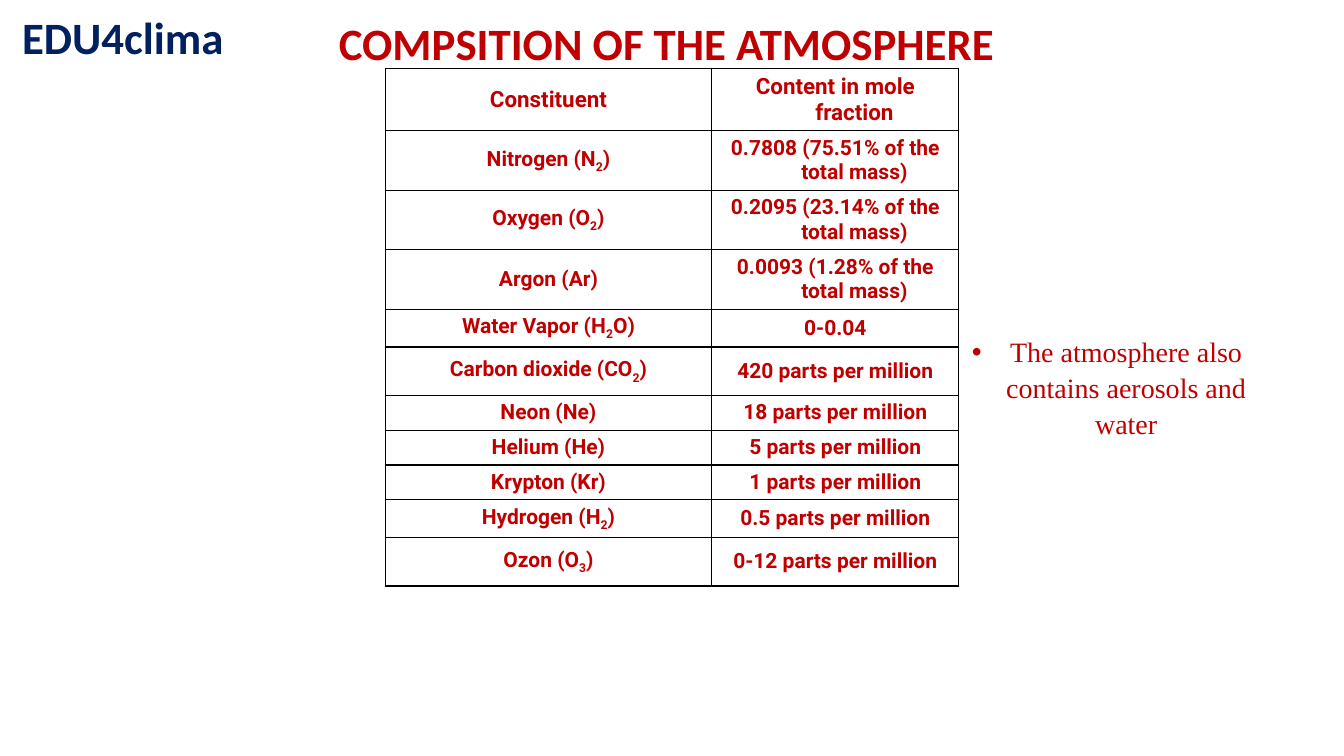
from dataclasses import dataclass

from lxml.etree import SubElement
from pptx import Presentation
from pptx.dml.color import RGBColor
from pptx.enum.text import MSO_ANCHOR as Anchor, MSO_AUTO_SIZE as AutoSize, PP_ALIGN as Align
from pptx.oxml import parse_xml
from pptx.oxml.ns import nsdecls, qn
from pptx.util import Inches, Pt


@dataclass(frozen=True)
class TextStyle:
    font: str
    size: int
    color: str
    bold: bool = True


@dataclass(frozen=True)
class Theme:
    title: TextStyle = TextStyle("Calibri", 32, "C00000")
    project: TextStyle = TextStyle("Calibri", 32, "002060")
    header: TextStyle = TextStyle("Roboto", 16, "C00000")
    cell: TextStyle = TextStyle("Roboto", 15, "C00000")
    remark: TextStyle = TextStyle("Times New Roman", 20, "C00000", bold=False)
    border: str = "010000"
    border_width: int = Pt(1)
    indent: int = Inches(0.38)


@dataclass(frozen=True)
class Constituent:
    """A table row; an underscore puts the next character in subscript."""
    name: str
    content: str
    height: float = 0.32


THEME = Theme()
COLUMN_WIDTHS = (3.24, 2.45)
ROWS = (
    Constituent("Constituent", "Content in mole fraction", 0.48),
    Constituent("Nitrogen (N_2)", "0.7808 (75.51% of the total mass)", 0.48),
    Constituent("Oxygen (O_2)", "0.2095 (23.14% of the total mass)", 0.48),
    Constituent("Argon (Ar)", "0.0093 (1.28% of the total mass)", 0.48),
    Constituent("Water Vapor (H_2O)", "0-0.04"),
    Constituent("Carbon dioxide (CO_2)", "420 parts per million", 0.48),
    Constituent("Νeon (Ne)", "18 parts per million"),
    Constituent("Helium (He)", "5 parts per million"),
    Constituent("Krypton (Kr)", "1 parts per million"),
    Constituent("Hydrogen (H_2)", "0.5 parts per million"),
    Constituent("Ozon (O_3)", "0-12 parts per million", 0.48),
)


def style_paragraph(para, style: TextStyle, align: Align) -> None:
    para.alignment = align
    font = para.font
    font.name, font.size, font.bold = style.font, Pt(style.size), style.bold
    font.color.rgb = RGBColor.from_string(style.color)


def set_hanging_indent(para) -> None:
    properties = para._p.get_or_add_pPr()
    properties.set("marL", str(THEME.indent))
    properties.set("indent", str(-THEME.indent))


def add_bullet(para, color: str) -> None:
    properties = para._p.get_or_add_pPr()
    bullet_color = SubElement(properties, qn("a:buClr"))
    SubElement(bullet_color, qn("a:srgbClr"), val=color)
    SubElement(properties, qn("a:buFont"), typeface="Arial")
    SubElement(properties, qn("a:buChar"), char="•")


def add_formula(para, text: str) -> None:
    """Add text whose characters after underscores are subscripts."""
    first, *rest = text.split("_")
    para.add_run().text = first
    for piece in rest:
        subscript = para.add_run()
        subscript.text = piece[0]
        subscript._r.get_or_add_rPr().set("baseline", "-25000")
        para.add_run().text = piece[1:]


def set_borders(cell) -> None:
    properties = cell._tc.get_or_add_tcPr()
    for position, side in enumerate("LRTB"):
        properties.insert(position, parse_xml(
            f'<a:ln{side} {nsdecls("a")} w="{THEME.border_width}"><a:solidFill>'
            f'<a:srgbClr val="{THEME.border}"/></a:solidFill></a:ln{side}>'))


def fill_cell(cell, text: str, style: TextStyle) -> None:
    cell.fill.background()
    set_borders(cell)
    cell.vertical_anchor = Anchor.MIDDLE
    para = cell.text_frame.paragraphs[0]
    set_hanging_indent(para)
    add_formula(para, text)
    style_paragraph(para, style, Align.CENTER)


def add_constituents(page) -> None:
    frame = page.shapes.add_table(
        len(ROWS), len(COLUMN_WIDTHS), Inches(3.82), Inches(0.68),
        Inches(sum(COLUMN_WIDTHS)), Inches(sum(row.height for row in ROWS)))
    table = frame.table
    table.first_row = table.horz_banding = False
    for column, width in zip(table.columns, COLUMN_WIDTHS):
        column.width = Inches(width)
    for index, row in enumerate(ROWS):
        table.rows[index].height = Inches(row.height)
        style = THEME.cell if index else THEME.header
        for column, text in enumerate((row.name, row.content)):
            fill_cell(table.cell(index, column), text, style)


def place_text(box, left: float, top: float, width: float, height: float,
               text: str, anchor: Anchor = Anchor.TOP):
    """Move and fill a box, and return its paragraph."""
    box.left, box.top = Inches(left), Inches(top)
    box.width, box.height = Inches(width), Inches(height)
    frame = box.text_frame
    frame.text = text
    frame.word_wrap = True
    frame.auto_size = AutoSize.NONE
    frame.vertical_anchor = anchor
    return frame.paragraphs[0]


def main() -> None:
    deck = Presentation()
    deck.slide_width, deck.slide_height = Inches(13.33), Inches(7.5)
    page = deck.slides.add_slide(deck.slide_layouts[1])
    add_constituents(page)

    remark = place_text(page.placeholders[1], 9.18, 3.25, 3.6, 2.52,
                        "The atmosphere also contains aerosols and water")
    remark.space_before = Pt(0)
    remark.line_spacing = 1.07
    set_hanging_indent(remark)
    add_bullet(remark, THEME.remark.color)
    style_paragraph(remark, THEME.remark, Align.CENTER)

    project_box = page.shapes.add_textbox(0, 0, 0, 0)
    project = place_text(project_box, 0, -0.06, 2.44, 0.84, "EDU4clima", Anchor.MIDDLE)
    style_paragraph(project, THEME.project, Align.CENTER)

    title = place_text(page.shapes.title, 3.26, 0.11, 6.8, 0.31,
                       "COMPSITION OF THE ATMOSPHERE")
    style_paragraph(title, THEME.title, Align.JUSTIFY)
    deck.save("out.pptx")


if __name__ == "__main__":
    main()
